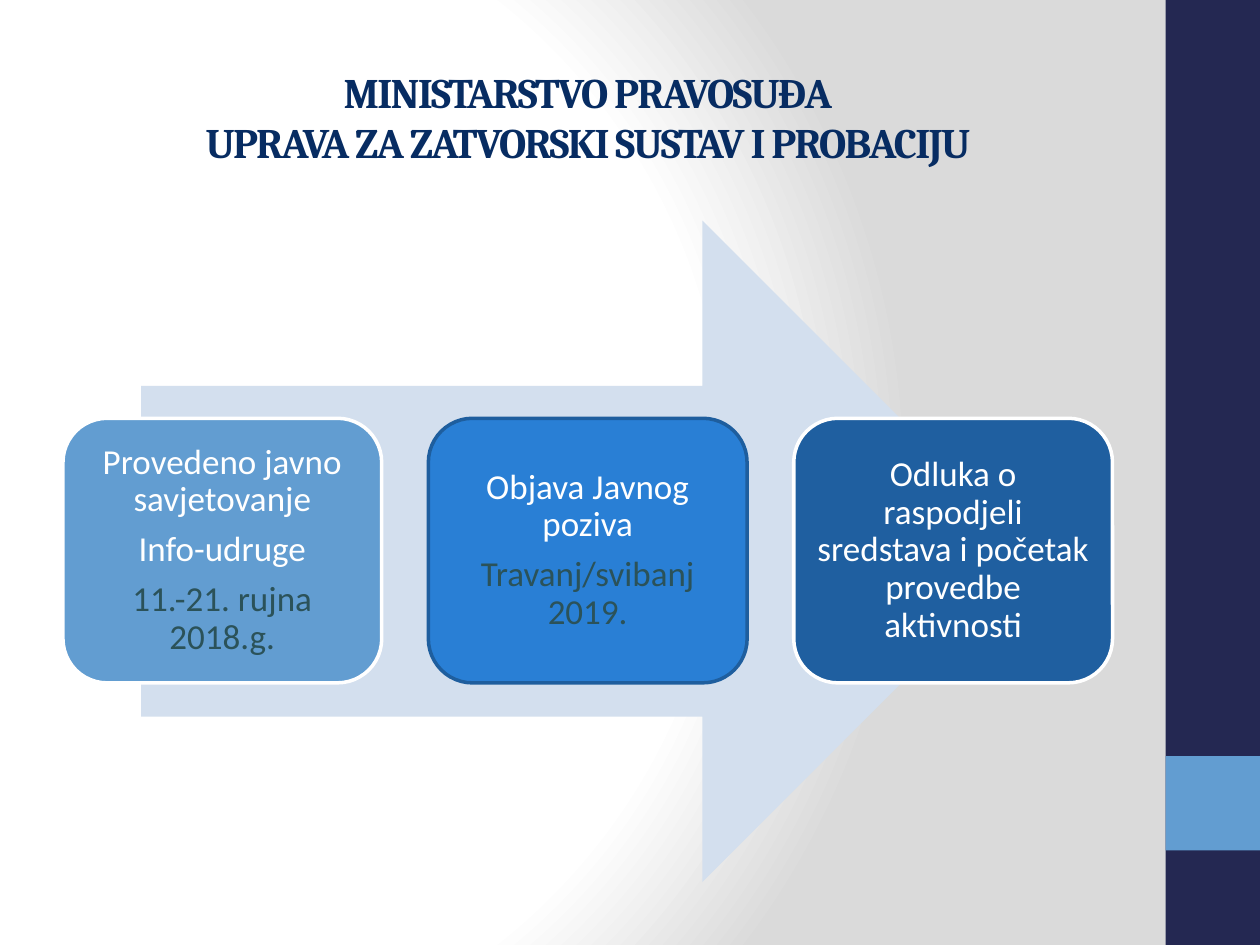
from lxml import etree
from pptx import Presentation
from pptx import util as u
from pptx.dml.color import RGBColor
from pptx.enum import shapes, text
from pptx.oxml import parse_xml
from pptx.oxml.ns import nsdecls, qn

SHAPE = shapes.MSO_SHAPE
TITLE_FONT = {"name": "Cambria", "size": u.Pt(24), "bold": True}
STEP_FONT = {"name": "Calibri", "size": u.Pt(20), "bold": False}
STEP_PARAGRAPH = {"alignment": text.PP_ALIGN.CENTER, "line_spacing": 0.9,
                  "space_after": u.Pt(7)}
MARGINS = ("margin_left", "margin_top", "margin_right", "margin_bottom")
FRAME = {"word_wrap": True, "vertical_anchor": text.MSO_ANCHOR.MIDDLE,
         **dict.fromkeys(MARGINS, u.Inches(0.08))}

NAVY, SKY, WHITE, TEAL = "242852", "629DD1", "FFFFFF", "2B5259"
STEP_LEFT, STEP_TOP, STEP_PITCH = 0.5, 3.32, 2.9
STEP_WIDTH, STEP_HEIGHT = 2.53, 2.1
STEPS = [
    (SKY, WHITE, [("Provedeno javno savjetovanje", WHITE),
                  ("Info-udruge", WHITE),
                  ("11.-21. rujna 2018.g.", TEAL)]),
    ("297FD5", "1E5E9E", [("Objava Javnog poziva", WHITE),
                          ("Travanj/svibanj 2019.", TEAL)]),
    ("1F5FA0", WHITE, [("Odluka o raspodjeli sredstava i početak "
                        "provedbe aktivnosti", WHITE)]),
]


def color(value):
    return RGBColor.from_string(value)


def apply(target, values):
    for name, value in values.items():
        setattr(target, name, value)


class Slide:
    """Holds the current slide and draws its elements in one style."""

    def __init__(self, page):
        self.page = page

    def background(self, stops, focus):
        """Fill the page with a circular gradient around the focus, in percent."""
        fill = self.page.background.fill
        fill.solid()
        solid = self.page.element.find(".//" + qn("a:solidFill"))
        gradient = parse_xml(f'<a:gradFill {nsdecls("a")} rotWithShape="1"><a:gsLst/>'
                             '<a:path path="circle"><a:fillToRect/></a:path></a:gradFill>')
        for position, value in stops:
            stop = etree.SubElement(gradient[0], qn("a:gs"), pos=str(position * 1000))
            etree.SubElement(stop, qn("a:srgbClr"), val=value)
        for side, percent in zip("ltrb", focus):
            gradient[1][0].set(side, str(percent * 1000))
        solid.getparent().replace(solid, gradient)

    def title(self, place, lines, value):
        box = self.page.shapes.title
        box.left, box.top, box.width, box.height = map(u.Inches, place)
        box.text_frame.vertical_anchor = text.MSO_ANCHOR.MIDDLE
        para = box.text_frame.paragraphs[0]
        para.alignment = text.PP_ALIGN.CENTER
        for index, line in enumerate(lines):
            if index:
                para.add_line_break()
            span = self.span(para, line, TITLE_FONT, value)
            span.font._element.set("spc", "-100")

    def span(self, para, words, font, value):
        span = para.add_run()
        span.text = words
        apply(span.font, font)
        span.font.color.rgb = color(value)
        return span

    def shape(self, kind, place, fill, line=None):
        box = self.page.shapes.add_shape(kind, *map(u.Inches, place))
        box.shadow.inherit = False
        box.fill.solid()
        box.fill.fore_color.rgb = color(fill)
        if line:
            box.line.color.rgb = color(line)
            box.line.width = u.Pt(2)
        else:
            box.line.fill.background()
        return box

    def step(self, place, fill, line, paragraphs):
        frame = self.shape(SHAPE.ROUNDED_RECTANGLE, place, fill, line).text_frame
        apply(frame, FRAME)
        for index, (words, value) in enumerate(paragraphs):
            para = frame.add_paragraph() if index else frame.paragraphs[0]
            apply(para, STEP_PARAGRAPH)
            self.span(para, words, STEP_FONT, value)


def main():
    deck = Presentation()
    deck.slide_width, deck.slide_height = u.Inches(10), u.Inches(7.5)
    slide = Slide(deck.slides.add_slide(deck.slide_layouts[5]))

    slide.background([(0, WHITE), (75, WHITE), (100, "DADADA")], (20, 50, 100, 50))
    slide.shape(SHAPE.RECTANGLE, (9.25, 0, 0.75, 7.5), NAVY)
    slide.shape(SHAPE.RECTANGLE, (9.25, 6, 0.75, 0.75), SKY)
    slide.title((0.5, 0.3, 8.33, 1.25),
                ["MINISTARSTVO PRAVOSUĐA", "UPRAVA ZA ZATVORSKI SUSTAV I PROBACIJU"],
                "072C62")
    slide.shape(SHAPE.RIGHT_ARROW, (1.12, 1.75, 7.08, 5.25), "D3DFEE")
    for index, (fill, line, paragraphs) in enumerate(STEPS):
        place = (STEP_LEFT + index * STEP_PITCH, STEP_TOP, STEP_WIDTH, STEP_HEIGHT)
        slide.step(place, fill, line, paragraphs)

    deck.save("out.pptx")


if __name__ == "__main__":
    main()
